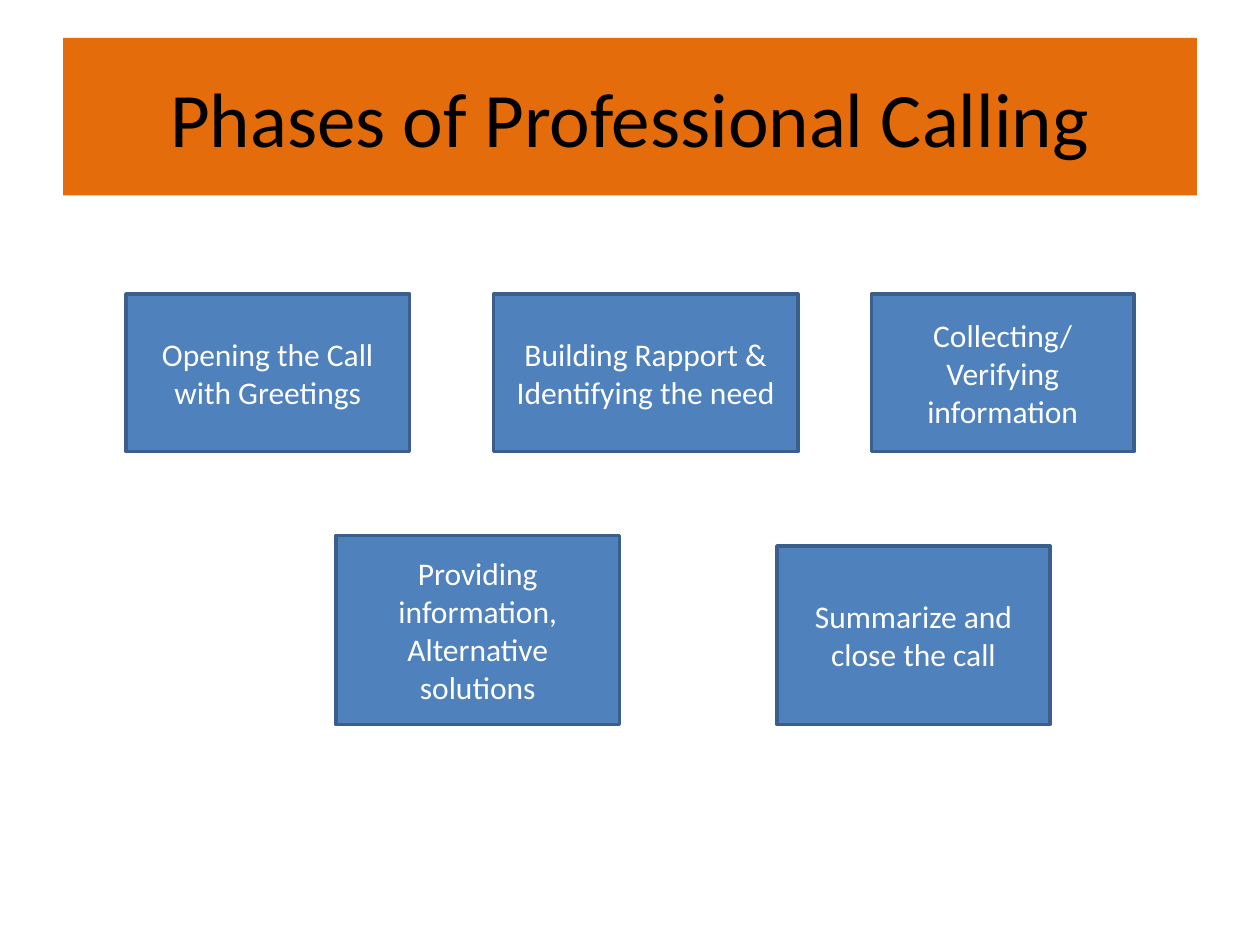
import pptx
import pptx.util
import pptx.dml.color
import pptx.enum.shapes
import pptx.enum.text

SLIDE_WIDTH, SLIDE_HEIGHT = 10, 7.5
COLUMNS, ROWS = 120, 90
TITLE = "Phases of Professional Calling"
TITLE_CELLS = (6, 3.6, 108, 15)
PHASE_ROWS = [
    {"bottom": 43, "phases": [
        ("Opening the Call with Greetings", 12, 27, 15),
        ("Building Rapport & Identifying the need", 47, 29, 15),
        ("Collecting/ Verifying information", 83, 25, 15),
    ]},
    {"bottom": 69, "phases": [
        ("Providing information, Alternative solutions", 32, 27, 18),
        ("Summarize and close the call", 74, 26, 17),
    ]},
]
TITLE_FONT = {"name": "Calibri", "size": pptx.util.Pt(44)}
PHASE_FONT = {"name": "Calibri", "size": pptx.util.Pt(18)}
FRAME_FORMAT = {
    "word_wrap": True,
    "auto_size": pptx.enum.text.MSO_AUTO_SIZE.NONE,
    "vertical_anchor": pptx.enum.text.MSO_ANCHOR.MIDDLE,
}


def colour(value):
    return pptx.dml.color.RGBColor.from_string(value)


def cells_to_lengths(left, top, width, height):
    across, down = SLIDE_WIDTH / COLUMNS, SLIDE_HEIGHT / ROWS
    shares = (left * across, top * down, width * across, height * down)
    return [pptx.util.Inches(share) for share in shares]


def set_values(target, values):
    for name, value in values.items():
        setattr(target, name, value)


def fill_box(box, text, fill, font, text_colour):
    box.fill.solid()
    box.fill.fore_color.rgb = colour(fill)
    set_values(box.text_frame, FRAME_FORMAT)
    para = box.text_frame.paragraphs[0]
    para.alignment = pptx.enum.text.PP_ALIGN.CENTER
    span = para.add_run()
    span.text = text
    set_values(span.font, font)
    span.font.color.rgb = colour(text_colour)


def add_phase(page, text, cells):
    box = page.shapes.add_shape(
        pptx.enum.shapes.MSO_SHAPE.RECTANGLE, *cells_to_lengths(*cells))
    box.shadow.inherit = False
    box.line.color.rgb = colour("3A5F8C")
    box.line.width = pptx.util.Pt(2)
    fill_box(box, text, "4F81BD", PHASE_FONT, "FFFFFF")


def main():
    deck = pptx.Presentation()
    deck.slide_width = pptx.util.Inches(SLIDE_WIDTH)
    deck.slide_height = pptx.util.Inches(SLIDE_HEIGHT)
    page = deck.slides.add_slide(deck.slide_layouts.get_by_name("Title Only"))

    title = page.shapes.title
    places = zip(("left", "top", "width", "height"), cells_to_lengths(*TITLE_CELLS))
    set_values(title, dict(places))
    fill_box(title, TITLE, "E46C0A", TITLE_FONT, "000000")

    for row in PHASE_ROWS:
        for text, left, width, height in row["phases"]:
            add_phase(page, text, (left, row["bottom"] - height, width, height))

    deck.save("out.pptx")


if __name__ == "__main__":
    main()
